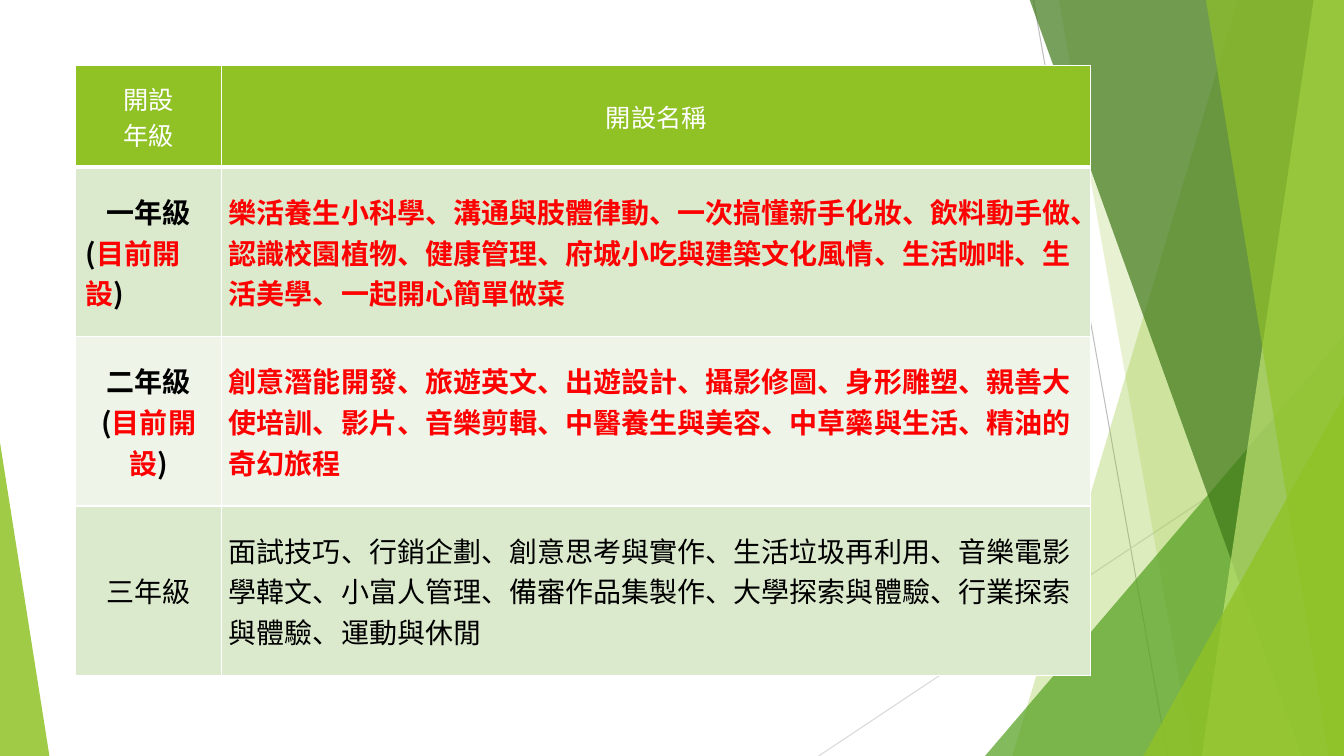
"""Build a slide with a table of elective courses by grade beside green facets."""
from dataclasses import dataclass

from lxml import etree
from pptx import Presentation
from pptx.dml.color import RGBColor
from pptx.enum.shapes import MSO_CONNECTOR, MSO_SHAPE
from pptx.enum.text import MSO_ANCHOR, PP_ALIGN
from pptx.oxml.ns import qn
from pptx.util import Emu, Pt

STRAIGHT = MSO_CONNECTOR.STRAIGHT
TRIANGLE = MSO_SHAPE.ISOSCELES_TRIANGLE
MIDDLE = MSO_ANCHOR.MIDDLE
LEFT, CENTER = PP_ALIGN.LEFT, PP_ALIGN.CENTER

EMU_PER_PX = 9144
SLIDE_WIDTH, SLIDE_HEIGHT = 1333, 750
FACET_TOP = -1
FONT = "Noto Sans CJK SC"
GREEN, WHITE, BLACK, RED = "90C226", "FFFFFF", "000000", "FF0000"
BAND_DARK, BAND_LIGHT = "DBE9CD", "EEF4E8"

TABLE_LEFT, TABLE_TOP = 75, 65
COLUMN_WIDTHS = (145, 862)
HEADER_HEIGHT, GRADE_HEIGHT = 101, 168
HEADER_INSET, GRADE_INSET, COURSE_INSET = 12, 10, 7


@dataclass(frozen=True)
class Ray:
    """A thin line behind the facets."""
    start: tuple[int, int]
    end: tuple[int, int]
    color: str


@dataclass(frozen=True)
class Facet:
    """A band from a slanted left edge to the right side of the slide."""
    top_x: int
    bottom_x: int
    color: str
    opacity: int


@dataclass(frozen=True)
class Corner:
    """A right triangle standing on the bottom of the slide."""
    left: int
    top: int
    width: int
    apex: int
    color: str
    opacity: int


@dataclass(frozen=True)
class Line:
    """A paragraph made of text and colour pairs."""
    runs: tuple[tuple[str, str], ...]
    size: int = 20
    bold: bool = True
    alignment: PP_ALIGN = CENTER


@dataclass(frozen=True)
class Entry:
    """The content and look of one table cell."""
    lines: tuple[Line, ...]
    fill: str
    inset: int
    header: bool = False


RAYS = (
    Ray((1025, 0), (1158, 750), "BFBFBF"),
    Ray((1333, 403), (812, 750), "D9D9D9"),
)
DECORATION = (
    Facet(1228, 1004, GREEN, 30),
    Facet(1050, 1183, GREEN, 20),
    Corner(977, 333, 356, 1, "54A021", 72),
    Facet(1021, 1291, "3F7819", 70),
    Facet(1303, 1192, "C0E474", 70),
    Facet(1196, 1318, GREEN, 65),
    Corner(1134, 393, 199, 1, GREEN, 80),
    Corner(0, 439, 49, 0, GREEN, 85),
)


def header(*texts: str) -> Entry:
    """Describe a header cell."""
    lines = tuple(Line(((text, WHITE),), 18, False) for text in texts)
    return Entry(lines, GREEN, HEADER_INSET, True)


def open_grade(name: str, alignment: PP_ALIGN, fill: str) -> Entry:
    """Describe the cell of a grade whose courses are running."""
    status = (("(", BLACK), ("目前開設", RED), (")", BLACK))
    lines = (Line(((name, BLACK),)), Line(status, alignment=alignment))
    return Entry(lines, fill, GRADE_INSET)


def courses(text: str, color: str, bold: bool, fill: str) -> Entry:
    """Describe a cell that lists courses."""
    line = Line(((text, color),), bold=bold, alignment=LEFT)
    return Entry((line,), fill, COURSE_INSET)


ROWS = (
    (header("開設", "年級"), header("開設名稱")),
    (open_grade("一年級", LEFT, BAND_DARK),
     courses("樂活養生小科學、溝通與肢體律動、一次搞懂新手化妝、飲料動手做、認識校園植物、健康管理、"
             "府城小吃與建築文化風情、生活咖啡、生活美學、一起開心簡單做菜", RED, True, BAND_DARK)),
    (open_grade("二年級", CENTER, BAND_LIGHT),
     courses("創意潛能開發、旅遊英文、出遊設計、攝影修圖、身形雕塑、親善大使培訓、影片、音樂剪輯、"
             "中醫養生與美容、中草藥與生活、精油的奇幻旅程", RED, True, BAND_LIGHT)),
    (Entry((Line((("三年級", BLACK),), bold=False),), BAND_DARK, GRADE_INSET),
     courses("面試技巧、行銷企劃、創意思考與實作、生活垃圾再利用、音樂電影學韓文、小富人管理、"
             "備審作品集製作、大學探索與體驗、行業探索與體驗、運動與休閒", BLACK, False, BAND_DARK)),
)


def px(length: int) -> Emu:
    """Turn px into EMU."""
    return Emu(length * EMU_PER_PX)


def rgb(color: str) -> RGBColor:
    """Turn a hex string into a colour."""
    return RGBColor.from_string(color)


def draw_ray(slide, ray: Ray) -> None:
    """Draw a thin line without a shadow."""
    connector = slide.shapes.add_connector(STRAIGHT, *map(px, ray.start + ray.end))
    connector.line.color.rgb = rgb(ray.color)
    connector.line.width = Pt(0.75)
    etree.SubElement(connector._element.spPr, qn("a:effectLst"))


def draw_decoration(slide, item: Facet | Corner) -> None:
    """Draw a translucent green shape."""
    if isinstance(item, Facet):
        builder = slide.shapes.build_freeform(px(item.top_x), px(FACET_TOP))
        corners = ((SLIDE_WIDTH, FACET_TOP), (SLIDE_WIDTH, SLIDE_HEIGHT),
                   (item.bottom_x, SLIDE_HEIGHT))
        builder.add_line_segments([(px(x), px(y)) for x, y in corners])
        shape = builder.convert_to_shape()
    else:
        shape = slide.shapes.add_shape(TRIANGLE, px(item.left), px(item.top),
                                       px(item.width), px(SLIDE_HEIGHT - item.top))
        shape.adjustments[0] = item.apex
    shape.shadow.inherit = False
    shape.line.fill.background()
    shape.fill.solid()
    shape.fill.fore_color.rgb = rgb(item.color)
    color = shape._element.spPr.find(qn("a:solidFill")).find(qn("a:srgbClr"))
    etree.SubElement(color, qn("a:alpha"), val=str(item.opacity * 1000))


def write_line(paragraph, line: Line) -> None:
    """Write a paragraph with its font and coloured runs."""
    paragraph.alignment = line.alignment
    paragraph.font.size = Pt(line.size)
    paragraph.font.bold = line.bold
    paragraph.font.name = FONT
    properties = paragraph._p.get_or_add_pPr().find(qn("a:defRPr"))
    etree.SubElement(properties, qn("a:ea"), typeface=FONT)
    for text, color in line.runs:
        run = paragraph.add_run()
        run.text = text
        run.font.color.rgb = rgb(color)


def draw_borders(cell, bottom: int) -> None:
    """Add white cell borders with a given bottom width in points."""
    properties = cell._tc.get_or_add_tcPr()
    for side, width in (("L", 1), ("R", 1), ("T", 1), ("B", bottom)):
        border = etree.SubElement(properties, qn(f"a:ln{side}"), w=str(Pt(width)))
        fill = etree.SubElement(border, qn("a:solidFill"))
        etree.SubElement(fill, qn("a:srgbClr"), val=WHITE)


def fill_cell(cell, entry: Entry) -> None:
    """Style a table cell and write its lines."""
    draw_borders(cell, 3 if entry.header else 1)
    cell.fill.solid()
    cell.fill.fore_color.rgb = rgb(entry.fill)
    cell.vertical_anchor = MIDDLE
    cell.margin_left = cell.margin_right = px(entry.inset)
    cell.margin_top = cell.margin_bottom = px(0)
    for index, line in enumerate(entry.lines):
        frame = cell.text_frame
        write_line(frame.add_paragraph() if index else frame.paragraphs[0], line)


def draw_table(slide) -> None:
    """Draw the table of grades and courses."""
    heights = [HEADER_HEIGHT] + [GRADE_HEIGHT] * (len(ROWS) - 1)
    table = slide.shapes.add_table(len(ROWS), len(COLUMN_WIDTHS), px(TABLE_LEFT), px(TABLE_TOP),
                                   px(sum(COLUMN_WIDTHS)), px(sum(heights))).table
    table.first_row = table.horz_banding = False
    for column, width in zip(table.columns, COLUMN_WIDTHS):
        column.width = px(width)
    for row, height, entries in zip(table.rows, heights, ROWS):
        row.height = px(height)
        for cell, entry in zip(row.cells, entries):
            fill_cell(cell, entry)


def main() -> None:
    """Build and save the presentation."""
    presentation = Presentation()
    presentation.slide_width, presentation.slide_height = px(SLIDE_WIDTH), px(SLIDE_HEIGHT)
    slide = presentation.slides.add_slide(presentation.slide_layouts[6])
    for ray in RAYS:
        draw_ray(slide, ray)
    for item in DECORATION:
        draw_decoration(slide, item)
    draw_table(slide)
    presentation.save("out.pptx")


if __name__ == "__main__":
    main()
